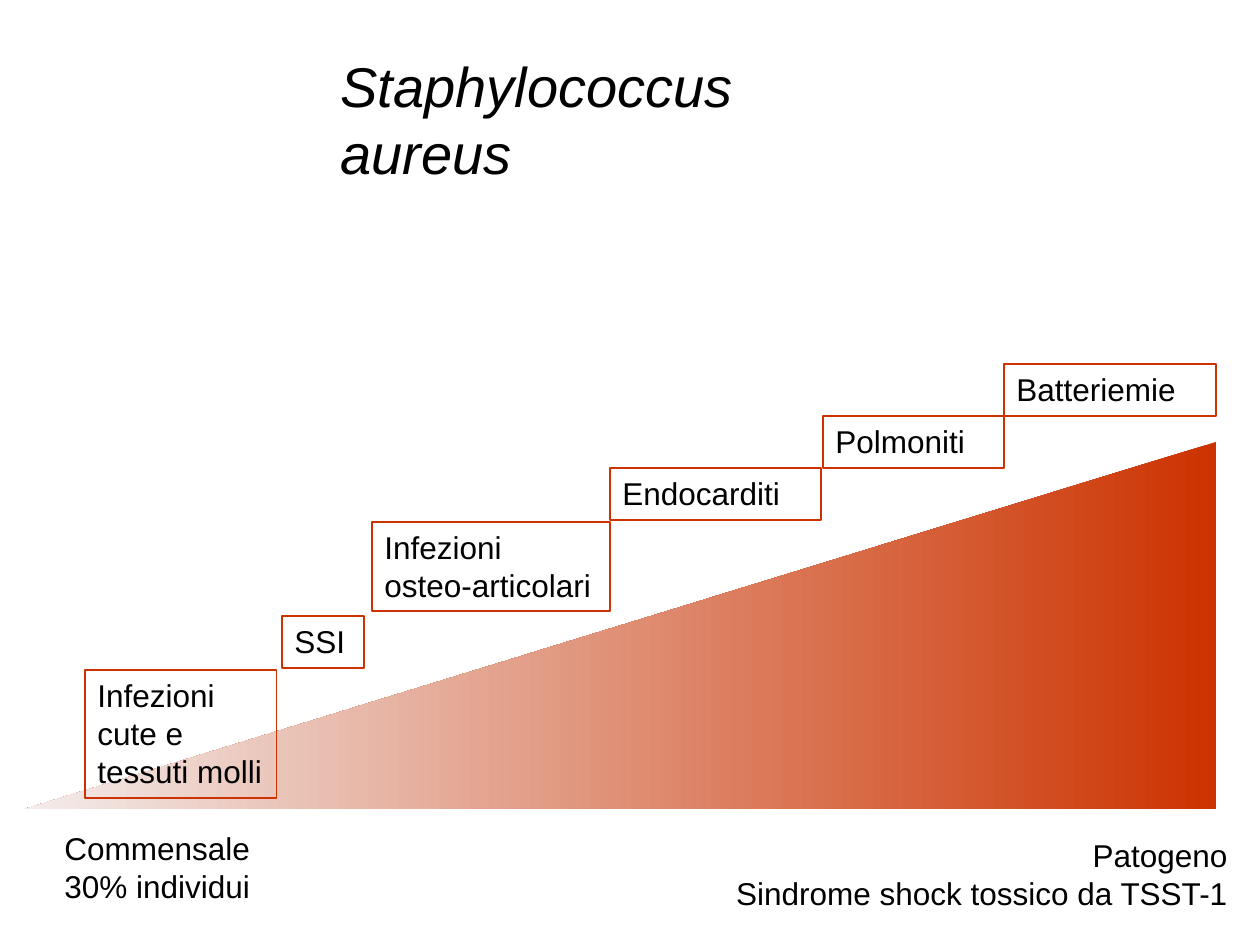
from pptx import Presentation
from pptx.dml.color import RGBColor
from pptx.enum.shapes import MSO_SHAPE
from pptx.enum.text import MSO_ANCHOR, MSO_AUTO_SIZE, PP_ALIGN
from pptx.util import Emu, Pt

LEFT, RIGHT = PP_ALIGN.LEFT, PP_ALIGN.RIGHT
TOP = MSO_ANCHOR.TOP
GROW = MSO_AUTO_SIZE.SHAPE_TO_FIT_TEXT
RIGHT_TRIANGLE = MSO_SHAPE.RIGHT_TRIANGLE

PX = 914400 // 126
FONT = "Arial"
COLORS = {"text": "000000", "severe": "CC3300", "mild": "F3ECEB"}

TITLE = ("Staphylococcus aureus", (328, 45, 590, 79))
SEVERITY_WEDGE = (25, 442, 1191, 367)

# Infections from mild to severe: label, (left, top, width, height)
INFECTIONS = [
    ("Infezioni cute e tessuti molli", (85, 670, 192, 128)),
    ("SSI", (282, 616, 82, 52)),
    ("Infezioni osteo-articolari", (372, 522, 238, 89)),
    ("Endocarditi", (610, 468, 211, 52)),
    ("Polmoniti", (823, 416, 181, 52)),
    ("Batteriemie", (1004, 364, 212, 52)),
]

# Ends of the scale: lines, (left, top, width, height), alignment
SCALE_ENDS = [
    (["Commensale", "30% individui"], (52, 823, 219, 88), LEFT),
    (["Patogeno", "Sindrome shock tossico da TSST-1"], (721, 830, 519, 88), RIGHT),
]


def color(name):
    return RGBColor.from_string(COLORS[name])


def emu(box):
    return [Emu(length * PX) for length in box]


def add_text(slide, lines, box, size=18, align=LEFT, wrap=True, italic=None):
    text_box = slide.shapes.add_textbox(*emu(box))
    frame = text_box.text_frame
    frame.word_wrap = wrap
    frame.auto_size = GROW
    frame.vertical_anchor = TOP
    frame.text = "\n".join(lines)
    for paragraph in frame.paragraphs:
        paragraph.alignment = align
        for run in paragraph.runs:
            run.font.name = FONT
            run.font.size = Pt(size)
            run.font.italic = italic
            run.font.color.rgb = color("text")
    return text_box


def add_severity_wedge(slide):
    """Draw the triangle that rises and darkens to the right."""
    wedge = slide.shapes.add_shape(RIGHT_TRIANGLE, *emu(SEVERITY_WEDGE))
    wedge.shadow.inherit = False
    wedge.line.fill.background()
    wedge.fill.gradient()
    wedge.fill.gradient_angle = 0
    for stop, name, position in zip(wedge.fill.gradient_stops, ("severe", "mild"), (0, 1)):
        stop.color.rgb = color(name)
        stop.position = position
    wedge._element.spPr.xfrm.set("flipH", "1")


def main():
    prs = Presentation()
    prs.slide_width, prs.slide_height = emu((1260, 945))
    slide = prs.slides.add_slide(prs.slide_layouts[6])

    title, title_box = TITLE
    add_text(slide, [title], title_box, size=32, italic=True)
    for lines, box, align in SCALE_ENDS:
        add_text(slide, lines, box, align=align, wrap=False)

    add_severity_wedge(slide)
    for infection, box in INFECTIONS:
        label = add_text(slide, [infection], box)
        label.line.color.rgb = color("severe")
        label.line.width = Pt(0.75)

    prs.save("out.pptx")


if __name__ == "__main__":
    main()
